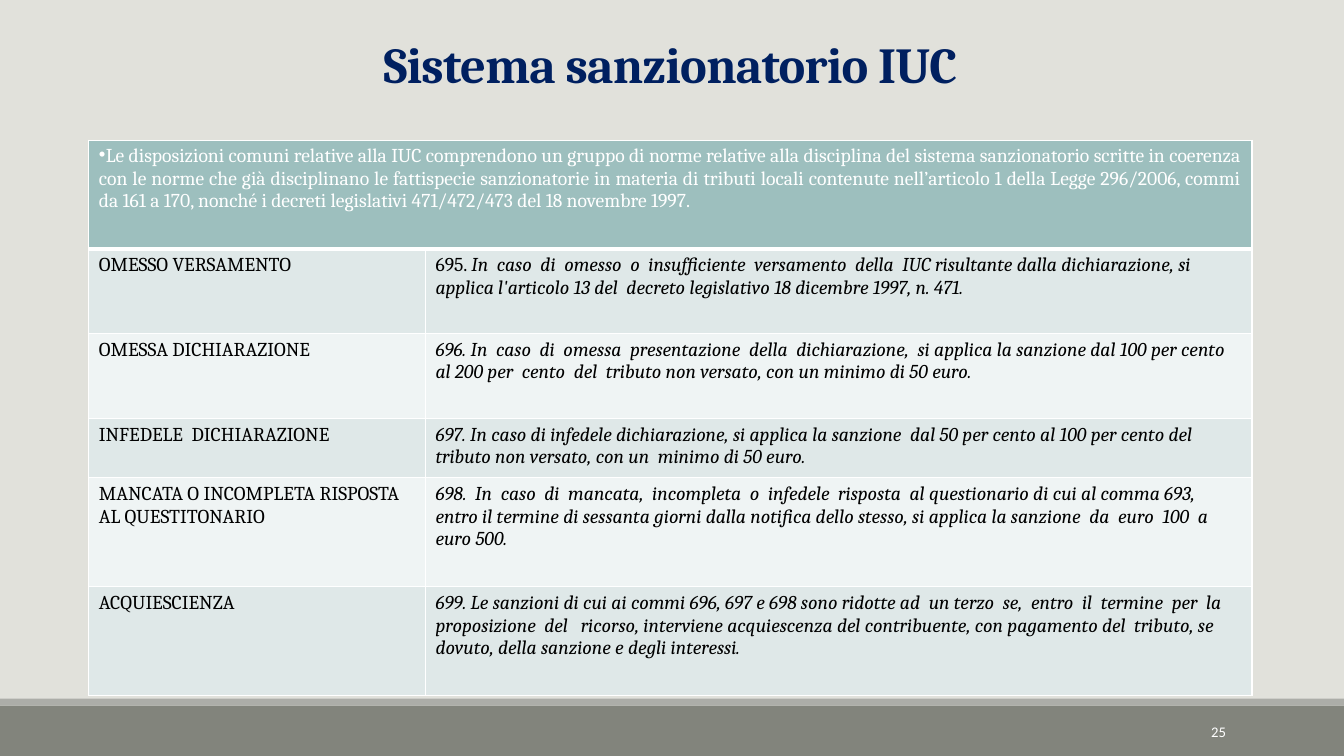
"""Build the slide on the IUC penalty system."""
from dataclasses import dataclass

from lxml import etree
from pptx import Presentation
from pptx.dml.color import RGBColor
from pptx.enum import shapes, text
from pptx.oxml import ns
from pptx.util import Pt

WHITE, BLACK, NAVY = "FFFFFF", "000000", "002060"
HEADER_FILL, BAND_FILLS = "9DBFBE", ("DFE8E8", "EFF4F4")
ALIGN, ANCHOR = text.PP_ALIGN, text.MSO_ANCHOR
COLUMN_WIDTHS = (240.5, 590.4)
HEADER_HEIGHT = 77.8
INTRO = (
    "Le disposizioni comuni relative alla IUC comprendono un gruppo di norme relative alla "
    "disciplina del sistema sanzionatorio scritte in coerenza con le norme che già disciplinano "
    "le fattispecie sanzionatorie in materia di tributi locali contenute nell’articolo 1 della "
    "Legge 296/2006, commi da 161 a 170, nonché i decreti legislativi 471/472/473 del "
    "18 novembre 1997."
)


@dataclass(frozen=True)
class Bar:
    top: float
    height: float
    fill: str


@dataclass(frozen=True)
class Label:
    left: float
    top: float
    width: float
    height: float
    words: str
    anchor: ANCHOR
    align: ALIGN
    font: dict
    line_spacing: float = 1.0
    tracking: int = 0


@dataclass(frozen=True)
class Penalty:
    height: float
    name: str
    rule: str
    upright: str = ""


BARS = (Bar(504, 36, "82847C"), Bar(499, 5, "ACADA8"))
LABELS = (
    Label(86.4, 25.9, 784.8, 44.6, "Sistema sanzionatorio IUC", ANCHOR.BOTTOM, ALIGN.CENTER,
          {"name": "Cambria", "size": Pt(36), "bold": True, "color": NAVY}, 0.85, -50),
    Label(779.8, 508.3, 103, 28.8, "25", ANCHOR.MIDDLE, ALIGN.RIGHT,
          {"name": "Calibri", "size": Pt(10.5), "color": WHITE}),
)
PENALTIES = (
    Penalty(60.5, "OMESSO VERSAMENTO",
            "In  caso  di  omesso  o  insufficiente  versamento  della  IUC risultante dalla "
            "dichiarazione, si applica l'articolo 13 del  decreto legislativo 18 dicembre 1997, "
            "n. 471.", "695. "),
    Penalty(60.5, "OMESSA DICHIARAZIONE",
            "696. In  caso  di  omessa  presentazione  della  dichiarazione,  si applica la "
            "sanzione dal 100 per cento al 200 per  cento  del  tributo non versato, con un "
            "minimo di 50 euro."),
    Penalty(42.5, "INFEDELE  DICHIARAZIONE",
            "697. In caso di infedele dichiarazione, si applica la sanzione  dal 50 per cento al "
            "100 per cento del tributo non versato, con un  minimo di 50 euro."),
    Penalty(77.8, "MANCATA O INCOMPLETA RISPOSTA AL QUESTITONARIO",
            "698.  In  caso  di  mancata,  incompleta  o  infedele  risposta  al questionario di "
            "cui al comma 693, entro il termine di sessanta giorni dalla notifica dello stesso, "
            "si applica la sanzione  da  euro  100  a euro 500."),
    Penalty(77.8, "ACQUIESCIENZA",
            "699. Le sanzioni di cui ai commi 696, 697 e 698 sono ridotte ad  un terzo  se,  "
            "entro  il  termine  per  la  proposizione  del   ricorso, interviene acquiescenza "
            "del contribuente, con pagamento del  tributo, se dovuto, della sanzione e degli "
            "interessi."),
)


def paint(fill, colour: str) -> None:
    """Give a fill one solid colour."""
    fill.solid()
    fill.fore_color.rgb = RGBColor.from_string(colour)


def add_span(para, words: str, font: dict):
    """Add a run of text with the given font values."""
    span = para.add_run()
    span.text = words
    for key, value in font.items():
        if key == "color":
            paint(span.font.fill, value)
        else:
            setattr(span.font, key, value)
    return span


def draw_bar(page, bar: Bar, width: int) -> None:
    """Draw a footer bar across the page."""
    shape = page.shapes.add_shape(shapes.MSO_SHAPE.RECTANGLE, 0, Pt(bar.top), width,
                                  Pt(bar.height))
    shape.shadow.inherit = False
    paint(shape.fill, bar.fill)
    shape.line.fill.background()


def draw_label(page, label: Label) -> None:
    """Draw a text box holding one line."""
    box = page.shapes.add_textbox(Pt(label.left), Pt(label.top), Pt(label.width),
                                  Pt(label.height))
    frame = box.text_frame
    frame.word_wrap = True
    frame.vertical_anchor = label.anchor
    para = frame.paragraphs[0]
    para.alignment = label.align
    para.line_spacing = label.line_spacing
    span = add_span(para, label.words, label.font)
    if label.tracking:
        span.font._element.set("spc", str(label.tracking))


def dress_cell(cell, colour: str, top: float = 1, bottom: float = 1) -> None:
    """Fill a cell and rule its four sides in white."""
    paint(cell.fill, colour)
    properties = cell._tc.get_or_add_tcPr()
    sides = {"lnL": 1, "lnR": 1, "lnT": top, "lnB": bottom}
    for index, (side, weight) in enumerate(sides.items()):
        line = etree.Element(ns.qn(f"a:{side}"), w=str(Pt(weight)))
        solid = etree.SubElement(line, ns.qn("a:solidFill"))
        etree.SubElement(solid, ns.qn("a:srgbClr"), val=WHITE)
        properties.insert(index, line)


def draw_table(page) -> None:
    """Draw the introduction and the penalties as a table."""
    heights = [HEADER_HEIGHT, *(penalty.height for penalty in PENALTIES)]
    table = page.shapes.add_table(len(heights), 2, Pt(63.4), Pt(100.1), Pt(sum(COLUMN_WIDTHS)),
                                  Pt(sum(heights))).table
    table.first_row = table.horz_banding = False
    for column, width in zip(table.columns, COLUMN_WIDTHS):
        column.width = Pt(width)
    for row, height in zip(table.rows, heights):
        row.height = Pt(height)

    body = {"name": "Cambria", "size": Pt(14), "color": BLACK}
    header = table.cell(0, 0)
    header.merge(table.cell(0, 1))
    for cell in table.rows[0].cells:
        dress_cell(cell, HEADER_FILL, bottom=3)
    para = header.text_frame.paragraphs[0]
    para.alignment = ALIGN.JUSTIFY
    etree.SubElement(para._p.get_or_add_pPr(), ns.qn("a:buChar"), char="•")
    add_span(para, INTRO, body | {"color": WHITE})

    for index, penalty in enumerate(PENALTIES):
        name, rule = table.rows[index + 1].cells
        for cell in (name, rule):
            dress_cell(cell, BAND_FILLS[index % 2], top=1 if index else 3)
        add_span(name.text_frame.paragraphs[0], penalty.name, body)
        para = rule.text_frame.paragraphs[0]
        if penalty.upright:
            add_span(para, penalty.upright, body)
        add_span(para, penalty.rule, body | {"italic": True})


def main() -> None:
    """Build and save the deck."""
    deck = Presentation()
    deck.slide_width, deck.slide_height = Pt(960), Pt(540)
    page = deck.slides.add_slide(deck.slide_layouts[6])
    paint(page.background.fill, "E1E1DB")
    for bar in BARS:
        draw_bar(page, bar, deck.slide_width)
    for label in LABELS:
        draw_label(page, label)
    draw_table(page)
    deck.save("out.pptx")


if __name__ == "__main__":
    main()
